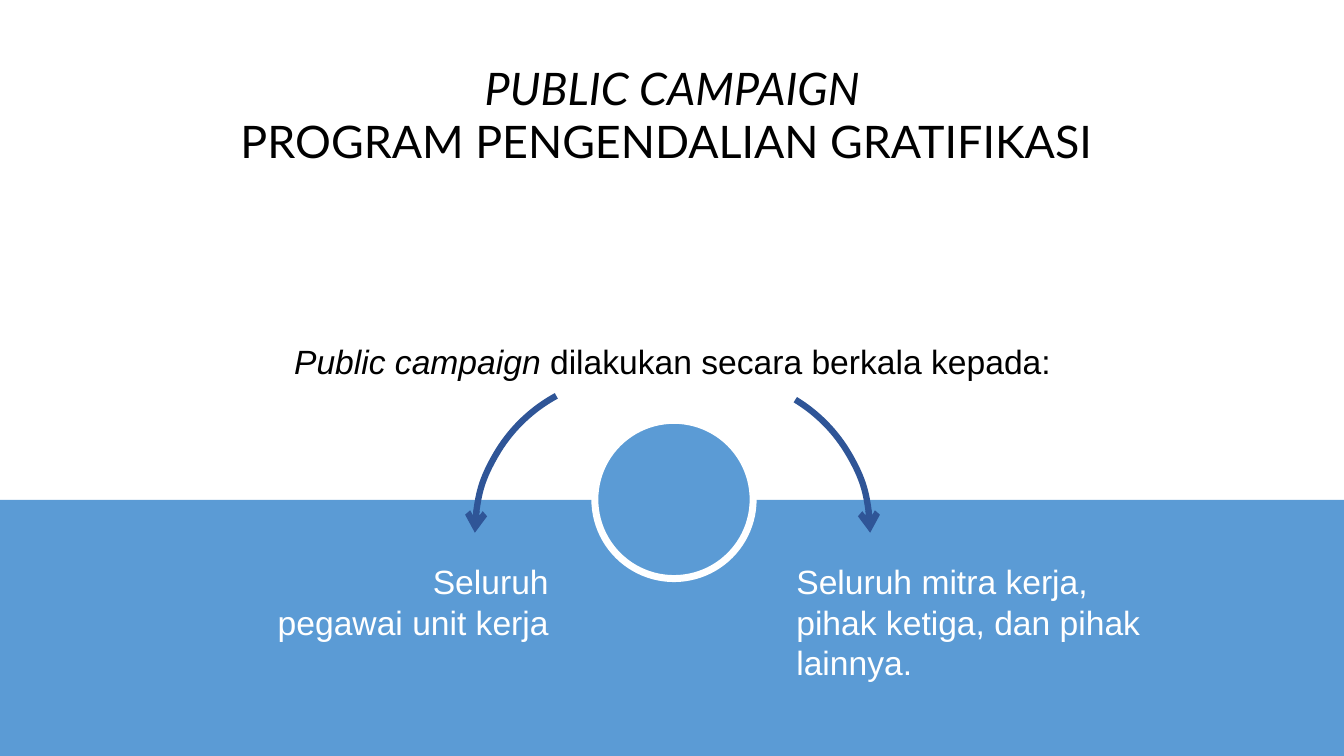
from lxml import etree
from pptx import Presentation
from pptx.dml.color import RGBColor
from pptx.enum.shapes import MSO_SHAPE
from pptx.enum.text import MSO_AUTO_SIZE, PP_ALIGN
from pptx.oxml.ns import qn
from pptx.util import Inches, Pt

RECT, OVAL, ARC = MSO_SHAPE.RECTANGLE, MSO_SHAPE.OVAL, MSO_SHAPE.ARC
LEFT, CENTER, RIGHT = PP_ALIGN.LEFT, PP_ALIGN.CENTER, PP_ALIGN.RIGHT
GROW = MSO_AUTO_SIZE.SHAPE_TO_FIT_TEXT
COLORS = {"blue": "5B9BD5", "navy": "2F5597", "white": "FFFFFF", "black": "000000"}


def color(name):
    """Return the named colour."""
    return RGBColor.from_string(COLORS[name])


def add_shape(slide, kind, box, fill=None, line=None, width=0):
    """Add a preset shape with an optional fill and outline."""
    shape = slide.shapes.add_shape(kind, *map(Inches, box))
    shape.shadow.inherit = False
    if fill:
        shape.fill.solid()
        shape.fill.fore_color.rgb = color(fill)
    else:
        shape.fill.background()
    if line:
        shape.line.color.rgb = color(line)
        shape.line.width = Pt(width)
    else:
        shape.line.fill.background()
    return shape


def add_arc(slide, left, start, stop, end, turn=0):
    """Add a curved arrow with its head at the given end."""
    arc = add_shape(slide, ARC, (left, 3.74, 3.09, 3.09), None, "navy", 4.5)
    arc.adjustments[0] = start
    arc.adjustments[1] = stop
    arc.rotation = turn
    tip = etree.SubElement(arc.line._get_or_add_ln(), qn(end))
    tip.set("type", "arrow")


def add_text(slide, box, lines, font, size, ink, align, wrap=True, space=None):
    """Add a text box; each line is a list of (text, italic) runs."""
    frame = slide.shapes.add_textbox(*map(Inches, box)).text_frame
    frame.word_wrap = wrap
    frame.auto_size = GROW
    for i, runs in enumerate(lines):
        para = frame.add_paragraph() if i else frame.paragraphs[0]
        para.alignment = align
        if space:
            para.line_spacing = space
        for text, italic in runs:
            run = para.add_run()
            run.text = text
            run.font.name = font
            run.font.size = Pt(size)
            run.font.italic = italic
            run.font.color.rgb = color(ink)


def main():
    """Build the campaign slide."""
    deck = Presentation()
    deck.slide_width, deck.slide_height = Inches(13.33), Inches(7.5)
    slide = deck.slides.add_slide(deck.slide_layouts[6])

    add_shape(slide, RECT, (0, 4.96, 13.33, 2.54), "blue")
    add_shape(slide, OVAL, (5.9, 4.17, 1.57, 1.57), "blue", "white", 5)

    add_text(slide, (2.25, 3.13, 8.84, 0.63),
             [[("Public campaign ", True), ("dilakukan secara berkala kepada:", False)]],
             "Arial", 24, "black", CENTER, space=1.5)
    add_text(slide, (1.82, 0.55, 9.7, 1.18),
             [[("PUBLIC CAMPAIGN", True)], [("PROGRAM PENGENDALIAN GRATIFIKASI ", False)]],
             "Lato", 32, "black", CENTER, wrap=False)
    add_text(slide, (2.62, 5.52, 2.92, 0.91),
             [[("Seluruh", False)], [("pegawai unit kerja", False)]],
             "Arial", 24, "white", RIGHT, wrap=False)
    add_text(slide, (7.8, 5.52, 3.72, 1.31),
             [[("Seluruh mitra kerja,", False)], [("pihak ketiga, dan pihak lainnya.", False)]],
             "Arial", 24, "white", LEFT)

    add_arc(slide, 5.54, 180.78, 0, "a:tailEnd")
    add_arc(slide, 4.71, 162, 198.9, "a:headEnd", turn=270)
    deck.save("out.pptx")


if __name__ == "__main__":
    main()
